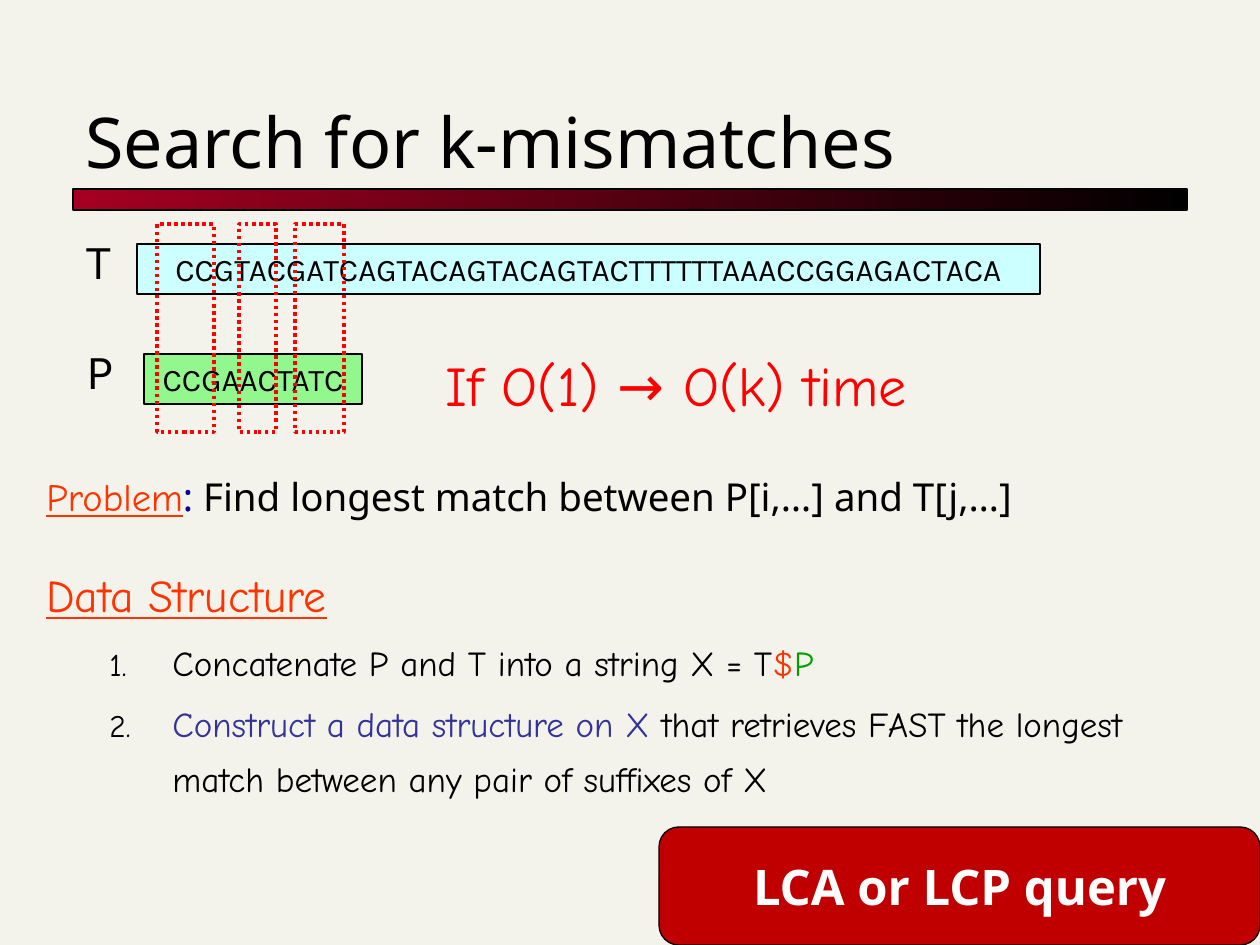
from dataclasses import dataclass
from typing import Any

from lxml import etree
from pptx import Presentation
from pptx.dml.color import RGBColor
from pptx.enum.dml import MSO_LINE
from pptx.enum.shapes import MSO_SHAPE
from pptx.enum.text import MSO_ANCHOR, MSO_AUTO_SIZE, PP_ALIGN
from pptx.oxml.ns import qn
from pptx.util import Emu, Pt

RECT, ROUNDED = MSO_SHAPE.RECTANGLE, MSO_SHAPE.ROUNDED_RECTANGLE
DOTTED = MSO_LINE.ROUND_DOT
MIDDLE, BOTTOM, TOP = MSO_ANCHOR.MIDDLE, MSO_ANCHOR.BOTTOM, MSO_ANCHOR.TOP
CENTER = PP_ALIGN.CENTER
FIT_TEXT = MSO_AUTO_SIZE.SHAPE_TO_FIT_TEXT

EMU_PER_PX = 914400 / 126
COLORS = {
    "background": "F4F3EB",
    "black": "000000",
    "white": "FFFFFF",
    "crimson": "A50021",
    "text_strip": "CCFFFF",
    "pattern_strip": "00FF00",
    "match": "FF0000",
    "heading": "FF3300",
    "colon": "000099",
    "pattern": "00A000",
    "emphasis": "333399",
    "answer": "C00000",
}
SANS, COMIC, KARLA = "Noto Sans", "Comic Neue", "Karla"


def px(length):
    return Emu(round(length * EMU_PER_PX))


def rgb(name):
    return RGBColor.from_string(COLORS[name])


@dataclass
class Board:
    slide: Any

    def style(self, font, face=None, size=None, color=None, bold=None, underline=None):
        if face:
            font.name = face
        if size:
            font.size = Pt(size)
        if color:
            font.color.rgb = rgb(color)
        if bold is not None:
            font.bold = bold
        if underline is not None:
            font.underline = underline

    def box(self, at, fill=None, line="black", width=0.75, kind=RECT, alpha=None, dash=None):
        shape = self.slide.shapes.add_shape(kind, *map(px, at))
        shape.shadow.inherit = False
        if fill:
            shape.fill.solid()
            shape.fill.fore_color.rgb = rgb(fill)
        else:
            shape.fill.background()
        if alpha:
            color = shape.fill._xPr.find(qn("a:solidFill"))[0]
            etree.SubElement(color, qn("a:alpha"), val=str(alpha * 1000))
        shape.line.color.rgb = rgb(line)
        shape.line.width = Pt(width)
        if dash:
            shape.line.dash_style = dash
        return shape

    def gradient_bar(self, at, start, end):
        bar = self.box(at)
        bar.fill.gradient()
        bar.fill.gradient_angle = 0
        for stop, name in zip(bar.fill.gradient_stops, (start, end)):
            stop.color.rgb = rgb(name)

    def labelled_box(self, at, text, face, size, color="black", bold=None, **look):
        frame = self.box(at, **look).text_frame
        frame.word_wrap = False
        frame.vertical_anchor = MIDDLE
        label = frame.paragraphs[0]
        label.text = text
        label.alignment = CENTER
        self.style(label.font, face, size, color, bold)

    def text_box(self, at, wrap=True, anchor=TOP):
        frame = self.slide.shapes.add_textbox(*map(px, at)).text_frame
        frame.word_wrap = wrap
        frame.vertical_anchor = anchor
        if not wrap:
            frame.auto_size = FIT_TEXT
        return frame

    def line_of_text(self, at, text, face, size, color="black", **layout):
        line = self.text_box(at, **layout).paragraphs[0]
        line.text = text
        self.style(line.font, face, size, color)

    def paragraph(self, paragraph, runs, size, indent, face=None, numbered=False):
        """Fill a hanging paragraph with (text, run style) pairs."""
        properties = paragraph._p.get_or_add_pPr()
        left, hang = indent
        properties.set("marL", str(px(left)))
        properties.set("indent", str(-px(hang)))
        paragraph.space_before = Pt(size * 0.2)
        if numbered:
            paragraph.level = 1
            paragraph.line_spacing = 1.3
            bullet_color = etree.SubElement(properties, qn("a:buClr"))
            etree.SubElement(bullet_color, qn("a:srgbClr"), val=COLORS["black"])
            etree.SubElement(properties, qn("a:buSzPct"), val="90000")
            etree.SubElement(properties, qn("a:buAutoNum"), type="arabicPeriod")
        self.style(paragraph.font, face, size)
        for text, look in runs:
            run = paragraph.add_run()
            run.text = text
            self.style(run.font, **look)


def main():
    deck = Presentation()
    deck.slide_width, deck.slide_height = px(1260), px(945)
    slide = deck.slides.add_slide(deck.slide_layouts[6])
    slide.background.fill.solid()
    slide.background.fill.fore_color.rgb = rgb("background")
    board = Board(slide)

    board.gradient_bar((73, 189, 1114, 21), "crimson", "black")
    board.line_of_text((73, 53, 1113, 136), "Search for k-mismatches", SANS, 40, anchor=BOTTOM)

    problem = board.text_box((34, 467, 1191, 64)).paragraphs[0]
    board.paragraph(problem, [
        ("Problem", {"face": COMIC, "color": "heading", "underline": True}),
        (": ", {"face": SANS, "color": "colon"}),
        ("Find longest match between P[i,…] and T[j,…]", {"face": SANS, "color": "black"}),
    ], size=22, indent=(48, 48))

    board.labelled_box((137, 244, 903, 50), "CCGTACGATCAGTACAGTACAGTACTTTTTTAAACCGGAGACTACA",
                       KARLA, 18, fill="text_strip")
    board.line_of_text((74, 224, 54, 72), "T", KARLA, 28, wrap=False)
    board.labelled_box((144, 354, 218, 50), "CCGAACTATC", KARLA, 18,
                       fill="pattern_strip", alpha=40)
    board.line_of_text((74, 334, 52, 72), "P", KARLA, 28, wrap=False)

    for left, width in ((157, 57), (239, 37), (295, 49)):
        board.box((left, 224, width, 208), line="match", width=2, dash=DOTTED)

    structure = board.text_box((34, 561, 1160, 319))
    board.paragraph(structure.paragraphs[0], [
        ("Data Structure", {"color": "heading", "underline": True}),
    ], size=26, indent=(68, 68), face=COMIC)
    steps = [
        [("Concatenate P and T into a string X = T", {"color": "black"}),
         ("$", {"color": "heading"}),
         ("P", {"color": "pattern"})],
        [("Construct a data structure on X ", {"color": "emphasis"}),
         ("that retrieves FAST the longest match between any pair of suffixes of X",
          {"color": "black"})],
    ]
    for step in steps:
        board.paragraph(structure.add_paragraph(), step, size=20, indent=(126, 63),
                        face=COMIC, numbered=True)

    board.labelled_box((659, 827, 601, 118), "LCA or LCP query", SANS, 28, "white", True,
                       fill="answer", kind=ROUNDED)
    board.line_of_text((433, 344, 572, 81), "If O(1) → O(k) time", COMIC, 32, "match", wrap=False)

    deck.save("out.pptx")


if __name__ == "__main__":
    main()
